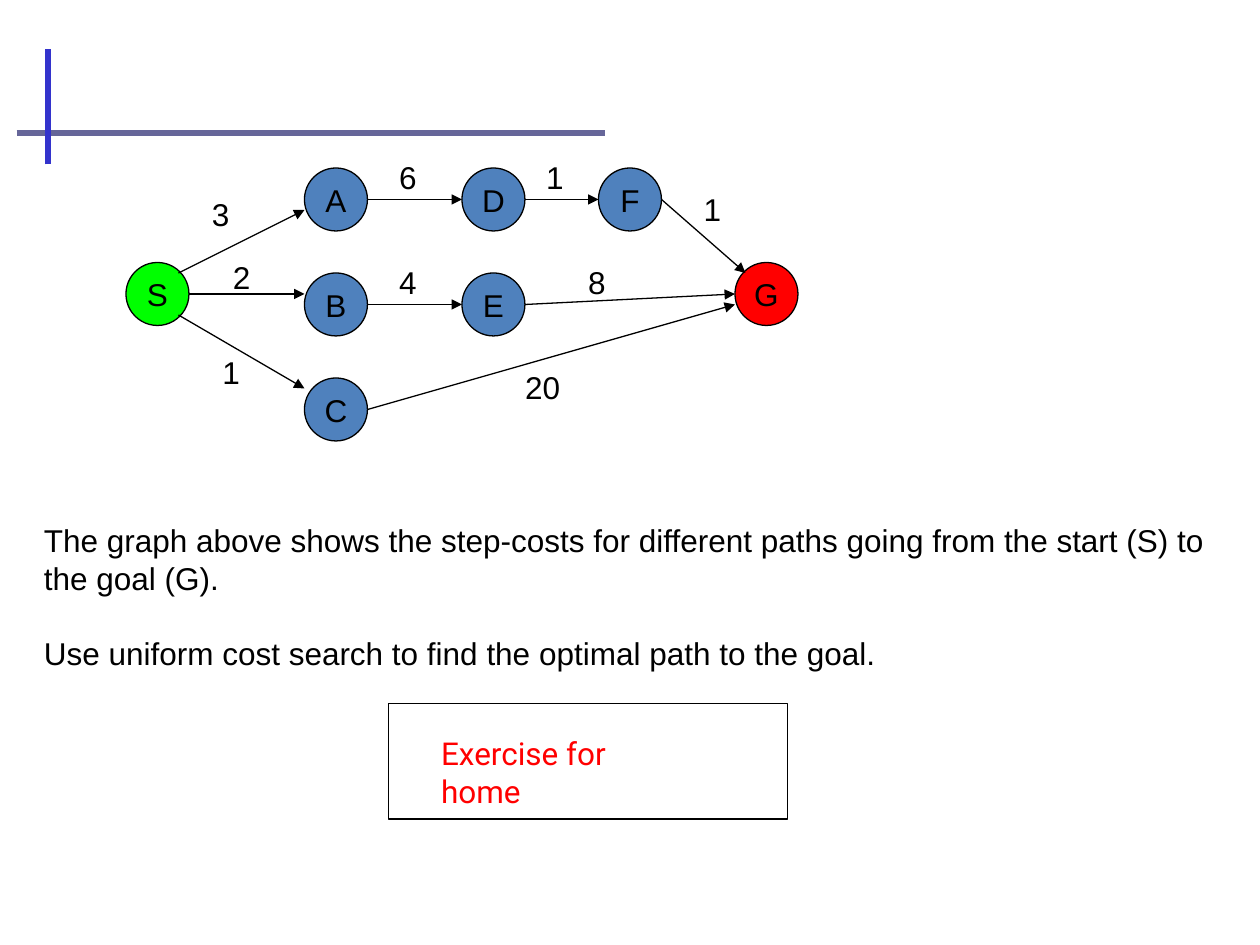
"""Build the uniform cost search exercise slide with its step-cost graph."""
from pptx import Presentation
from pptx.dml.color import RGBColor as RGB
from pptx.enum.shapes import MSO_CONNECTOR as CONN, MSO_SHAPE as SHAPE
from pptx.enum.text import MSO_ANCHOR as ANCHOR, PP_ALIGN as ALIGN
from pptx.oxml.ns import qn
from pptx.util import Pt
from lxml.etree import SubElement as sub

COLORS = {
    "black": "000000", "start": "00FF00", "goal": "FF0000", "node": "4F81BD",
    "note": "FF0000", "slate": "666699", "blue": "3333CC",
}


def draw_line(start, end, color="black", width=0.75, arrow=False):
    line = slide.shapes.add_connector(CONN.STRAIGHT, *map(Pt, start + end))
    line.line.color.rgb = RGB.from_string(COLORS[color])
    line.line.width = Pt(width)
    if arrow:
        sub(line.line._get_or_add_ln(), qn("a:tailEnd"), type="triangle")
    sub(line._element.spPr, qn("a:effectLst"))


def write(par, text, color="black", font="Arial"):
    run = par.add_run()
    run.text = text
    run.font.size = Pt(18)
    run.font.name = font
    run.font.color.rgb = RGB.from_string(COLORS[color])


deck = Presentation()
deck.slide_width, deck.slide_height = Pt(720), Pt(540)
slide = deck.slides.add_slide(deck.slide_layouts[6])

draw_line((9.5, 76), (345.5, 76), "slate", 3)
draw_line((27.5, 94), (27.5, 28), "blue", 3)

nodes = [
    ("S", 72, 150, "start"), ("B", 174, 156, "node"), ("A", 174, 96, "node"),
    ("D", 264, 96, "node"), ("E", 264, 156, "node"), ("C", 174, 216, "node"),
    ("F", 342, 96, "node"), ("G", 420, 150, "goal"),
]
for name, left, top, color in nodes:
    node = slide.shapes.add_shape(SHAPE.OVAL, Pt(left), Pt(top), Pt(36), Pt(36))
    node.shadow.inherit = False
    node.fill.solid()
    node.fill.fore_color.rgb = RGB.from_string(COLORS[color])
    node.line.color.rgb = RGB.from_string(COLORS["black"])
    node.line.width = Pt(0.75)
    frame = node.text_frame
    frame.word_wrap = False
    frame.vertical_anchor = ANCHOR.MIDDLE
    frame.paragraphs[0].alignment = ALIGN.CENTER
    write(frame.paragraphs[0], name)

edges = [
    ((102, 156), (174, 120), "3", (114, 108)),
    ((108, 168), (174, 168), "2", (126, 144)),
    ((102, 180), (174, 222), "1", (120, 198)),
    ((210, 114), (264, 114), "6", (221, 87)),
    ((210, 174), (264, 174), "4", (221, 147)),
    ((210, 234), (420, 174), "20", (293, 207)),
    ((300, 174), (420, 168), "8", (329, 147)),
    ((300, 114), (342, 114), "1", (305, 87)),
    ((378, 114), (426, 156), "1", (395, 105)),
]
for start, end, cost, (left, top) in edges:
    draw_line(start, end, arrow=True)
    wide = 14.4 + 10 * len(cost)
    label = slide.shapes.add_textbox(Pt(left), Pt(top), Pt(wide), Pt(29))
    label.text_frame.word_wrap = False
    write(label.text_frame.paragraphs[0], cost)

task = slide.shapes.add_textbox(Pt(18), Pt(294), Pt(682.5), Pt(137))
task.text_frame.word_wrap = True
lines = [
    ("The graph above shows the step-costs for different paths going from the start (S) to", 0),
    ("the goal (G).", 0),
    ("Use uniform cost search to find the optimal path to the goal.", 21.6),
]
for i, (text, gap) in enumerate(lines):
    par = task.text_frame.add_paragraph() if i else task.text_frame.paragraphs[0]
    par.line_spacing = Pt(21.6)
    par.space_before = Pt(gap)
    write(par, text)

note = slide.shapes.add_textbox(Pt(245), Pt(416), Pt(150), Pt(50))
note.text_frame.word_wrap = True
write(note.text_frame.paragraphs[0], "Exercise for home", "note", "Roboto")

frame = slide.shapes.add_shape(SHAPE.RECTANGLE, Pt(222), Pt(402), Pt(228), Pt(66))
frame.shadow.inherit = False
frame.fill.background()
frame.line.color.rgb = RGB.from_string(COLORS["black"])
frame.line.width = Pt(0.75)

deck.save("out.pptx")
